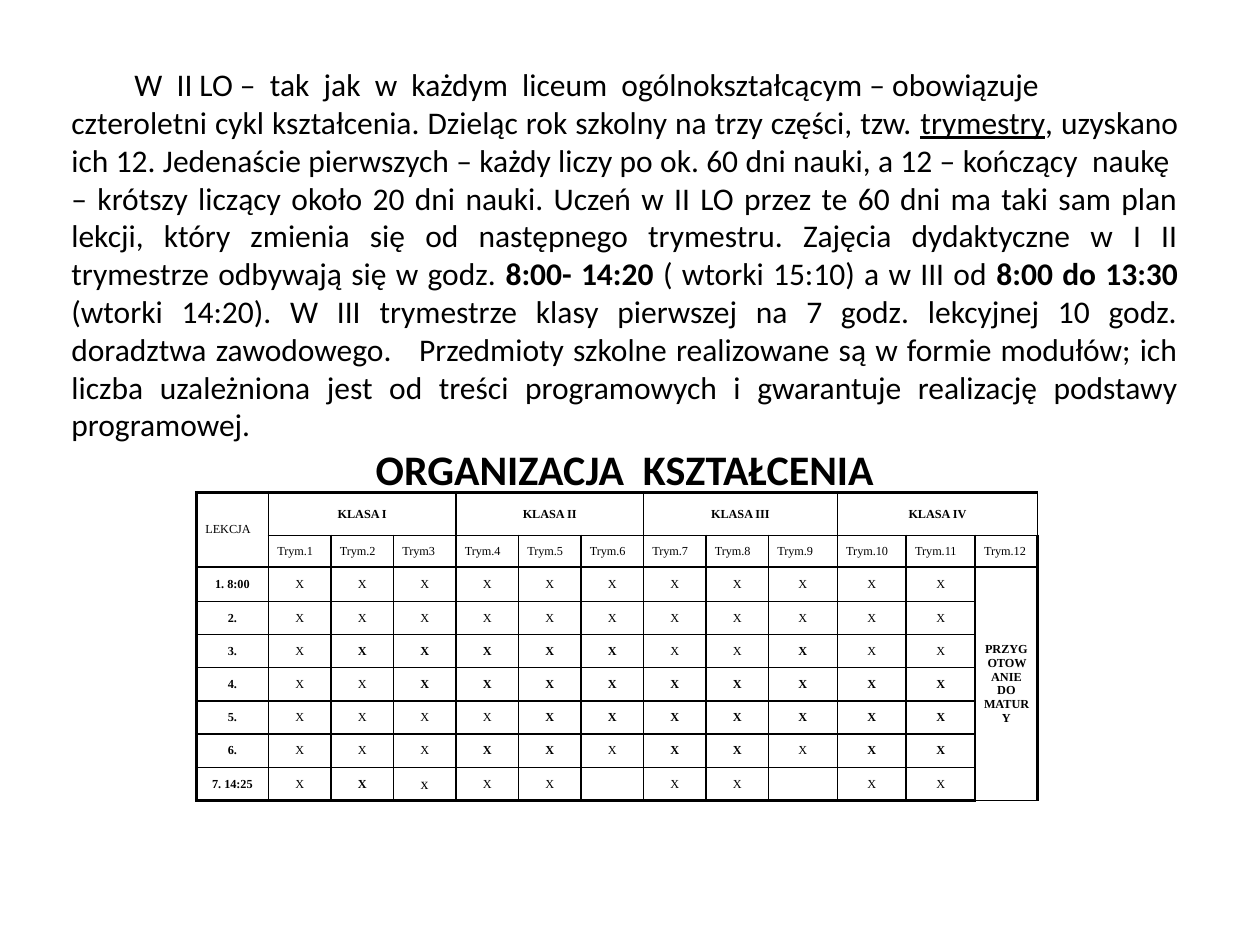
"""Builds the slide about the trimester system and its lesson table."""
import pptx
import pptx.dml.color
import pptx.enum.text
import pptx.util
from lxml import etree
from pptx.oxml.ns import qn

Cm, Pt = pptx.util.Cm, pptx.util.Pt
ALIGN = pptx.enum.text.PP_ALIGN

INTRO = [("\tW  II LO –  tak  jak  w  każdym  liceum  ogólnokształcącym – obowiązuje", "")]
BODY = [
    ("czteroletni cykl kształcenia. Dzieląc rok szkolny na trzy części, tzw. ", ""),
    ("trymestry", "u"),
    (", uzyskano ich 12. Jedenaście pierwszych – każdy liczy po ok. 60 dni nauki, "
     "a 12 – kończący  naukę  – krótszy liczący około 20 dni nauki. Uczeń w II LO "
     "przez te 60 dni ma taki sam plan lekcji, który zmienia się od następnego "
     "trymestru. Zajęcia dydaktyczne w I II trymestrze odbywają się w godz. ", ""),
    ("8:00- 14:20 ", "b"),
    ("( wtorki 15:10) a w III od ", ""),
    ("8:00 do 13:30 ", "b"),
    ("(wtorki 14:20). W III trymestrze klasy pierwszej na 7 godz. lekcyjnej 10 godz. "
     "doradztwa zawodowego.   Przedmioty szkolne realizowane są w formie modułów; ich "
     "liczba uzależniona jest od treści programowych i gwarantuje realizację podstawy "
     "programowej.", ""),
]
HEADING = [("ORGANIZACJA  KSZTAŁCENIA", "b")]

CLASSES = ["KLASA I", "KLASA II", "KLASA III", "KLASA IV"]
TERMS = [f"Trym{'' if n == 3 else '.'}{n}" for n in range(1, 13)]
LESSONS = [
    ("1. 8:00", "..........."),
    ("2.", "..........."),
    ("3.", ".BBBBB..B.."),
    ("4.", "..BBBBBBBBB"),
    ("5.", "....BBBBBBB"),
    ("6.", "...BB.BB.BB"),
    ("7. 14:25", ".Bx.._.._.."),
]
MARKS = {".": ("X", False, 7), "B": ("X", True, 7), "x": ("x", False, 9), "_": ("", False, 7)}
COLS = [1.45] + [1.26] * 8 + [1.39] * 3 + [1.26]
ROWS = [0.86, 0.64, 0.7, 0.66] + [0.67] * 5


def color(value):
    return pptx.dml.color.RGBColor.from_string(value)


class Deck:
    """Holds the style and the current slide."""
    ink = "000000"
    text_font = "Calibri"
    table_font = "Times New Roman"
    thin, thick = 1, 2.25

    def __init__(self):
        self.prs = pptx.Presentation()
        self.prs.slide_width, self.prs.slide_height = Cm(25.4), Cm(19.05)
        self.s = self.prs.slides.add_slide(self.prs.slide_layouts[6])

    def font(self, p, name, size, bold=None):
        p.font.name, p.font.size, p.font.bold = name, Pt(size), bold
        p.font.color.rgb = color(self.ink)

    def text(self, x, y, w, h, paragraphs):
        tf = self.s.shapes.add_textbox(Cm(x), Cm(y), Cm(w), Cm(h)).text_frame
        tf.word_wrap = True
        for i, (runs, size, align) in enumerate(paragraphs):
            p = tf.add_paragraph() if i else tf.paragraphs[0]
            p.alignment = align
            self.font(p, self.text_font, size)
            for words, style in runs:
                r = p.add_run()
                r.text = words
                if style == "b":
                    r.font.bold = True
                elif style == "u":
                    r.font.underline = True

    def table(self, x, y, cols, rows):
        frame = self.s.shapes.add_table(
            len(rows), len(cols), Cm(x), Cm(y), Cm(sum(cols)), Cm(sum(rows)))
        t = frame.table
        t.first_row = t.horz_banding = False
        for col, width in zip(t.columns, cols):
            col.width = Cm(width)
        for row, height in zip(t.rows, rows):
            row.height = Cm(height)
        for i in range(len(rows)):
            for j in range(len(cols)):
                edges = {"L": j == 0, "R": j == len(cols) - 1,
                         "T": i == 0, "B": i == len(rows) - 1}
                self.cell_frame(t.cell(i, j), edges)
        return t

    def cell_frame(self, cell, edges):
        cell.margin_left = cell.margin_right = Cm(0.18)
        cell.margin_top = cell.margin_bottom = 0
        cell.vertical_anchor = pptx.enum.text.MSO_ANCHOR.MIDDLE
        tc_pr = cell._tc.get_or_add_tcPr()
        for side, outer in edges.items():
            width = Pt(self.thick if outer else self.thin)
            ln = etree.SubElement(tc_pr, qn(f"a:ln{side}"), w=str(width))
            fill = etree.SubElement(ln, qn("a:solidFill"))
            etree.SubElement(fill, qn("a:srgbClr"), val=self.ink)
        cell.fill.background()

    def cell(self, cell, words, bold=False, size=7, align=ALIGN.CENTER):
        p = cell.text_frame.paragraphs[0]
        p.alignment = align
        self.font(p, self.table_font, size, bold)
        if words:
            p.add_run().text = words
        else:
            p._p.get_or_add_endParaRPr().set("sz", str(size * 100))


def main():
    deck = Deck()
    deck.text(1.19, 1.19, 22.81, 9.07, [
        (INTRO, 18, ALIGN.JUSTIFY), (BODY, 18, ALIGN.JUSTIFY), (HEADING, 24, ALIGN.CENTER)])

    t = deck.table(3.96, 9.93, COLS, ROWS)
    t.cell(0, 0).merge(t.cell(1, 0))
    deck.cell(t.cell(0, 0), "LEKCJA", align=ALIGN.LEFT)
    for i, name in enumerate(CLASSES):
        first = 1 + 3 * i
        t.cell(0, first).merge(t.cell(0, first + 2))
        deck.cell(t.cell(0, first), name, bold=True)
    for j, term in enumerate(TERMS, 1):
        deck.cell(t.cell(1, j), term, align=ALIGN.LEFT)
    for i, (lesson, marks) in enumerate(LESSONS, 2):
        deck.cell(t.cell(i, 0), lesson, bold=True)
        for j, mark in enumerate(marks, 1):
            deck.cell(t.cell(i, j), *MARKS[mark])
    exam = t.cell(2, 12)
    exam.merge(t.cell(8, 12))
    deck.cell(exam, "PRZYGOTOWANIE DO MATURY", bold=True)
    exam._tc.tcPr.set("vert", "eaVert")

    deck.prs.save("out.pptx")


if __name__ == "__main__":
    main()
